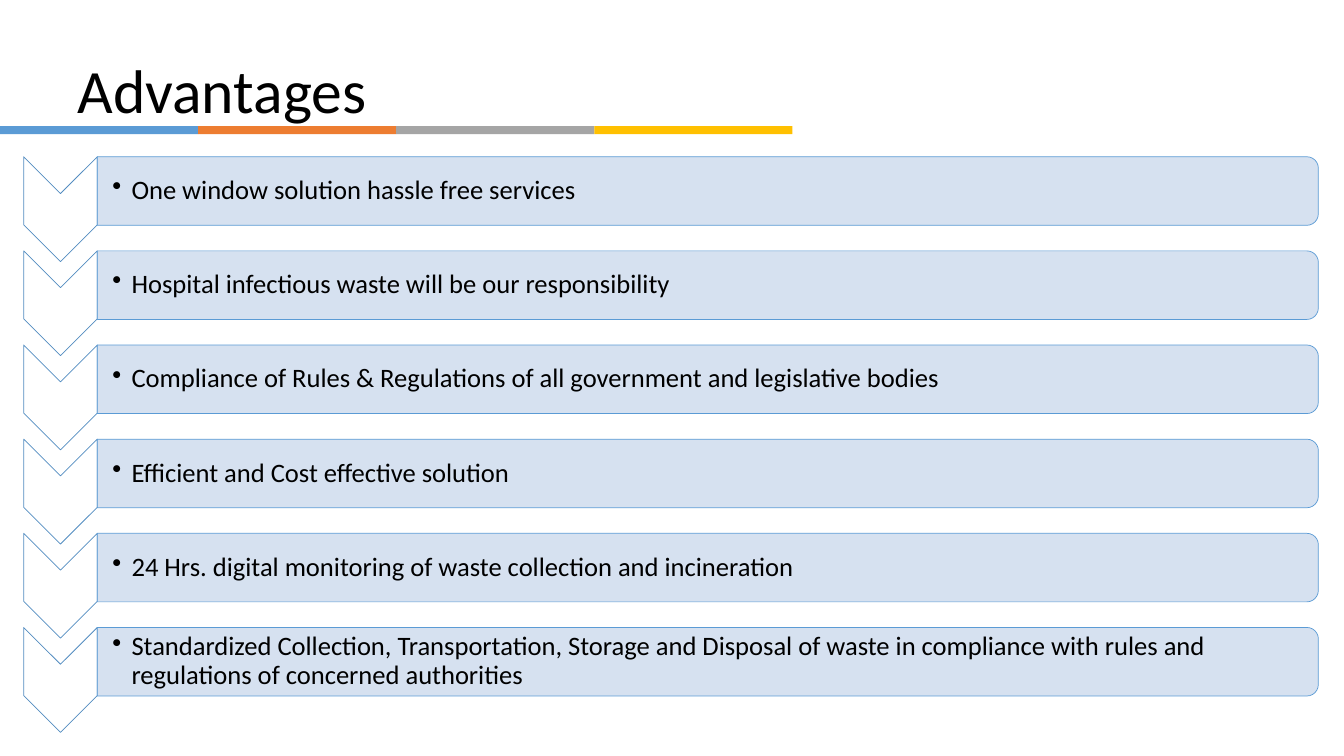
from lxml.etree import SubElement
from pptx import Presentation
from pptx.dml.color import RGBColor
from pptx.enum.shapes import MSO_SHAPE as Shape
from pptx.enum.text import MSO_ANCHOR as Anchor
from pptx.oxml.ns import qn
from pptx.util import Inches, Pt

TITLE = "Advantages"
ADVANTAGES = [
    "One window solution hassle free services",
    "Hospital infectious waste will be our responsibility",
    "Compliance of Rules & Regulations of all government and legislative bodies",
    "Efficient and Cost effective solution",
    "24 Hrs. digital monitoring of waste collection and incineration",
    "Standardized Collection, Transportation, Storage and Disposal of waste "
    "in compliance with rules and regulations of concerned authorities",
]

BLACK = RGBColor(0x00, 0x00, 0x00)
WHITE = RGBColor(0xFF, 0xFF, 0xFF)
BLUE = RGBColor(0x5B, 0x9B, 0xD5)
ORANGE = RGBColor(0xED, 0x7D, 0x31)
GRAY = RGBColor(0xA5, 0xA5, 0xA5)
GOLD = RGBColor(0xFF, 0xC0, 0x00)
CHEVRON_LINE = RGBColor(0x53, 0x8D, 0xC1)
BAR_FILL = RGBColor(0xD2, 0xDE, 0xEF)

STRIPE_COLORS = [BLUE, ORANGE, GRAY, GOLD]
STRIPE_TOP, STRIPE_WIDTH, STRIPE_HEIGHT = 1.25, 1.965, 0.08
FIRST_TOP, LAST_TOP = 1.555, 6.225
ROW_STEP = (LAST_TOP - FIRST_TOP) / (len(ADVANTAGES) - 1)
CHEVRON_LEFT, CHEVRON_WIDTH, CHEVRON_HEIGHT = 0.235, 0.73, 1.04
BAR_LEFT, BAR_WIDTH, BAR_HEIGHT = 0.965, 12.11, 0.68
TEXT_WIDTH, TEXT_HEIGHT = 12.07, 0.61


def add_shape(page, kind, left, top, width, height, fill, line=None, turned=False):
    if turned:
        left, top = left + (width - height) / 2, top + (height - width) / 2
        width, height = height, width
    shape = page.shapes.add_shape(
        kind, Inches(left), Inches(top), Inches(width), Inches(height))
    shape.rotation = 90 if turned else 0
    shape.shadow.inherit = False
    shape.fill.solid()
    shape.fill.fore_color.rgb = fill
    if line is None:
        shape.line.fill.background()
    else:
        shape.line.color.rgb = line
        shape.line.width = Pt(0.5)
    return shape


def add_text(page, text, left, top, width, height, size):
    box = page.shapes.add_textbox(
        Inches(left), Inches(top), Inches(width), Inches(height))
    frame = box.text_frame
    frame.word_wrap = True
    frame.vertical_anchor = Anchor.MIDDLE
    para = frame.paragraphs[0]
    para.line_spacing = 0.9
    span = para.add_run()
    span.text = text
    span.font.name = "Calibri"
    span.font.size = Pt(size)
    span.font.color.rgb = BLACK
    return frame


def add_bullet(frame):
    frame.margin_left = Inches(0.15)
    frame.margin_top = frame.margin_right = frame.margin_bottom = Inches(0.01)
    settings = frame.paragraphs[0]._p.get_or_add_pPr()
    settings.set("marL", str(Inches(0.19)))
    settings.set("indent", str(-Inches(0.19)))
    SubElement(settings, qn("a:buChar")).set("char", "•")


def add_advantage(page, text, top):
    add_shape(page, Shape.CHEVRON, CHEVRON_LEFT, top, CHEVRON_WIDTH,
              CHEVRON_HEIGHT, WHITE, CHEVRON_LINE, turned=True)
    bar = add_shape(page, Shape.ROUND_2_SAME_RECTANGLE, BAR_LEFT, top, BAR_WIDTH,
                    BAR_HEIGHT, BAR_FILL, BLUE, turned=True)
    color = bar._element.spPr.find(qn("a:solidFill"))[0]
    SubElement(color, qn("a:alpha")).set("val", "90000")
    text_top = top + (BAR_HEIGHT - TEXT_HEIGHT) / 2
    add_bullet(add_text(page, text, BAR_LEFT, text_top, TEXT_WIDTH, TEXT_HEIGHT, 19))


def main():
    deck = Presentation()
    deck.slide_width, deck.slide_height = Inches(13.33), Inches(7.5)
    page = deck.slides.add_slide(deck.slide_layouts[6])
    add_text(page, TITLE, 0.67, 0.3, 11.77, 1.25, 44)
    for index, color in enumerate(STRIPE_COLORS):
        add_shape(page, Shape.RECTANGLE, index * STRIPE_WIDTH, STRIPE_TOP,
                  STRIPE_WIDTH, STRIPE_HEIGHT, color)
    for index, text in enumerate(ADVANTAGES):
        add_advantage(page, text, FIRST_TOP + index * ROW_STEP)
    deck.save("out.pptx")


if __name__ == "__main__":
    main()
